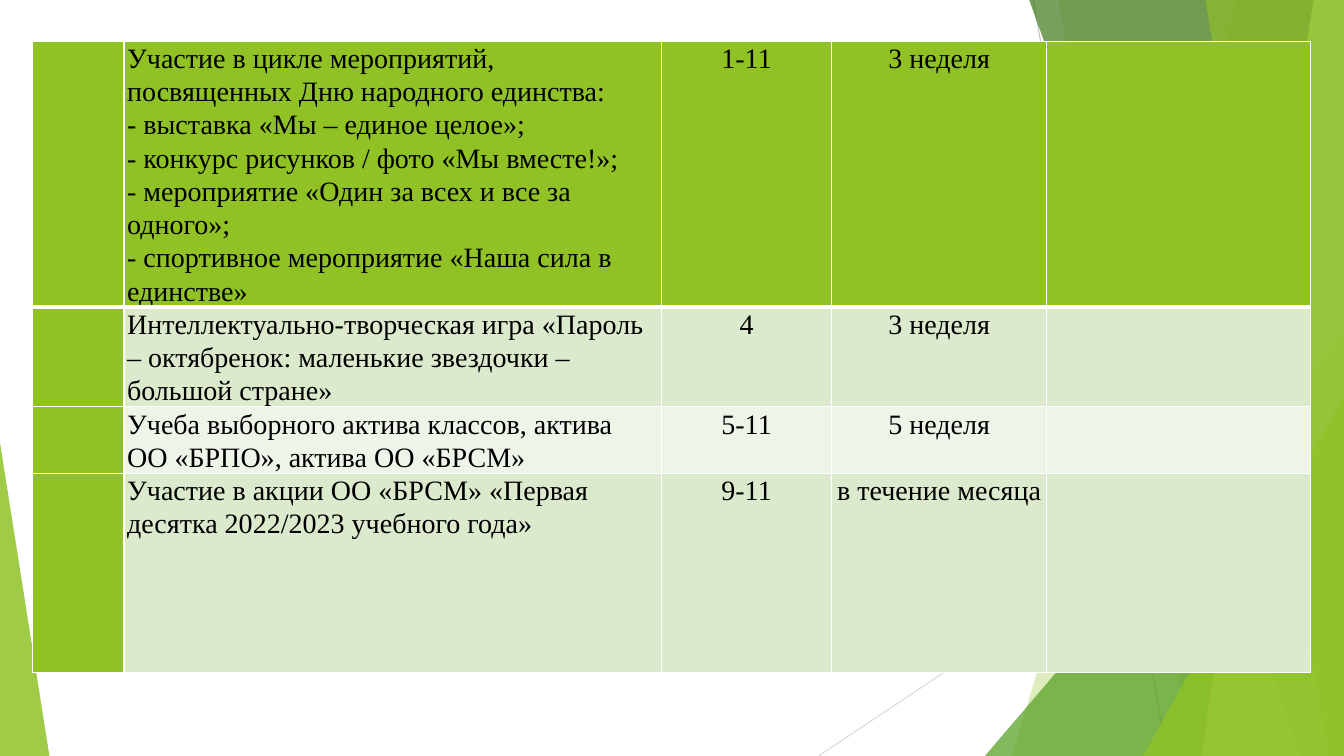
import pptx
import pptx.dml.color
import pptx.enum.shapes
import pptx.enum.text
import pptx.oxml.ns
import pptx.util

qn = pptx.oxml.ns.qn
SHAPES = pptx.enum.shapes.MSO_SHAPE
ALIGN = pptx.enum.text.PP_ALIGN

LIME, PALE, MIST = "90C226", "DBE9CD", "EEF4E8"
WHITE, BLACK = "FFFFFF", "000000"

RAYS = [
    ((76.88, 0), (86.85, 100), "BFBFBF"),
    ((100, 53.73), (60.9, 100), "D9D9D9"),
]
BACK = [(92.1, 75.3, LIME, 30), (78.75, 88.73, LIME, 20)]
FRONT = [
    (76.58, 96.83, "3F7819", 70),
    (97.73, 89.4, "C0E474", 70),
    (89.7, 98.85, LIME, 65),
]

COLS = [6.83, 39.98, 12.68, 15.98, 19.65]
ROWS = [
    (35.07, LIME, [
        "Участие в цикле мероприятий, посвященных Дню народного единства:",
        "- выставка «Мы – единое целое»;",
        "- конкурс рисунков / фото «Мы вместе!»;",
        "- мероприятие «Один за всех и все за одного»;",
        "- спортивное мероприятие «Наша сила в единстве»",
    ], "1-11", "3 неделя"),
    (13.2, PALE, [
        "Интеллектуально-творческая игра «Пароль – октябренок: "
        "маленькие звездочки – большой стране»",
    ], "4", "3 неделя"),
    (8.8, MIST, [
        "Учеба выборного актива классов, актива ОО «БРПО», актива ОО «БРСМ»",
    ], "5-11", "5 неделя"),
    (26.33, PALE, [
        "Участие в акции ОО «БРСМ» «Первая десятка 2022/2023 учебного года»",
    ], "9-11", "в течение месяца"),
]


def tint(code):
    return pptx.dml.color.RGBColor.from_string(code)


class Page:
    """Draws styled elements on one slide, with lengths in percent of its size."""

    font, size, lead = "Times New Roman", 20, 1.07

    def __init__(self, deck):
        self.wide, self.high = deck.slide_width, deck.slide_height
        self.slide = deck.slides.add_slide(deck.slide_layouts[6])
        self.shapes = self.slide.shapes

    def x(self, share):
        return round(self.wide * share / 100)

    def y(self, share):
        return round(self.high * share / 100)

    def ray(self, start, end, code):
        ray = self.shapes.add_connector(
            pptx.enum.shapes.MSO_CONNECTOR.STRAIGHT,
            self.x(start[0]), self.y(start[1]), self.x(end[0]), self.y(end[1]))
        ray.line.color.rgb = tint(code)
        ray.line.width = pptx.util.Pt(0.75)
        props = ray._element.spPr
        props.append(props.makeelement(qn("a:effectLst")))

    def paint(self, shape, code, alpha):
        shape.shadow.inherit = False
        shape.fill.solid()
        shape.fill.fore_color.rgb = tint(code)
        shape.line.fill.background()
        color = shape._element.spPr.find(".//" + qn("a:srgbClr"))
        color.append(color.makeelement(qn("a:alpha"), {"val": str(alpha * 1000)}))

    def facet(self, top, base, code, alpha):
        form = self.shapes.build_freeform(self.x(top), 0, scale=1.0)
        form.add_line_segments([
            (self.wide, 0), (self.wide, self.high), (self.x(base), self.high)])
        self.paint(form.convert_to_shape(), code, alpha)

    def wedge(self, left, top, width, peak, code, alpha):
        shape = self.shapes.add_shape(
            SHAPES.ISOSCELES_TRIANGLE, self.x(left), self.y(top),
            self.x(width), self.y(100 - top))
        shape.adjustments[0] = peak
        self.paint(shape, code, alpha)

    def edge(self, cell, widths):
        props = cell._tc.get_or_add_tcPr()
        for side, width in zip("LRTB", widths):
            line = props.makeelement(
                qn("a:ln" + side), {"w": str(int(pptx.util.Pt(width)))})
            fill = line.makeelement(qn("a:solidFill"))
            fill.append(fill.makeelement(qn("a:srgbClr"), {"val": WHITE}))
            line.append(fill)
            props.append(line)

    def label(self, cell, lines, align):
        cell.margin_left = cell.margin_right = pptx.util.Inches(0.03)
        cell.margin_top = cell.margin_bottom = 0
        cell.text = "\n".join(lines)
        for para in cell.text_frame.paragraphs:
            para.alignment = align
            para.line_spacing = self.lead
            para.font.name = self.font
            para.font.size = pptx.util.Pt(self.size)
            para.font.bold = False
            para.font.color.rgb = tint(BLACK)

    def table(self, left, top, cols, rows):
        frame = self.shapes.add_table(
            len(rows), len(cols), self.x(left), self.y(top),
            self.x(sum(cols)), self.y(sum(row[0] for row in rows)))
        table = frame.table
        table.first_row = table.horz_banding = False
        for col, width in zip(table.columns, cols):
            col.width = self.x(width)
        for r, (height, code, event, grade, week) in enumerate(rows):
            table.rows[r].height = self.y(height)
            for c, lines in enumerate([None, event, [grade], [week], None]):
                cell = table.cell(r, c)
                self.edge(cell, (1, 1, 3 if r == 1 else 1, 3 if r == 0 else 1))
                cell.fill.solid()
                cell.fill.fore_color.rgb = tint(code if c else LIME)
                if lines:
                    self.label(cell, lines, ALIGN.LEFT if c == 1 else ALIGN.CENTER)


def main():
    deck = pptx.Presentation()
    deck.slide_width = pptx.util.Inches(13.33)
    deck.slide_height = pptx.util.Inches(7.5)
    page = Page(deck)
    for ray in RAYS:
        page.ray(*ray)
    for facet in BACK:
        page.facet(*facet)
    page.wedge(73.28, 44.4, 26.72, 1, "54A021", 72)
    for facet in FRONT:
        page.facet(*facet)
    page.wedge(85.05, 52.4, 14.95, 1, LIME, 80)
    page.wedge(0, 58.53, 3.68, 0, LIME, 85)
    page.table(2.4, 5.47, COLS, ROWS)
    deck.save("out.pptx")


if __name__ == "__main__":
    main()
